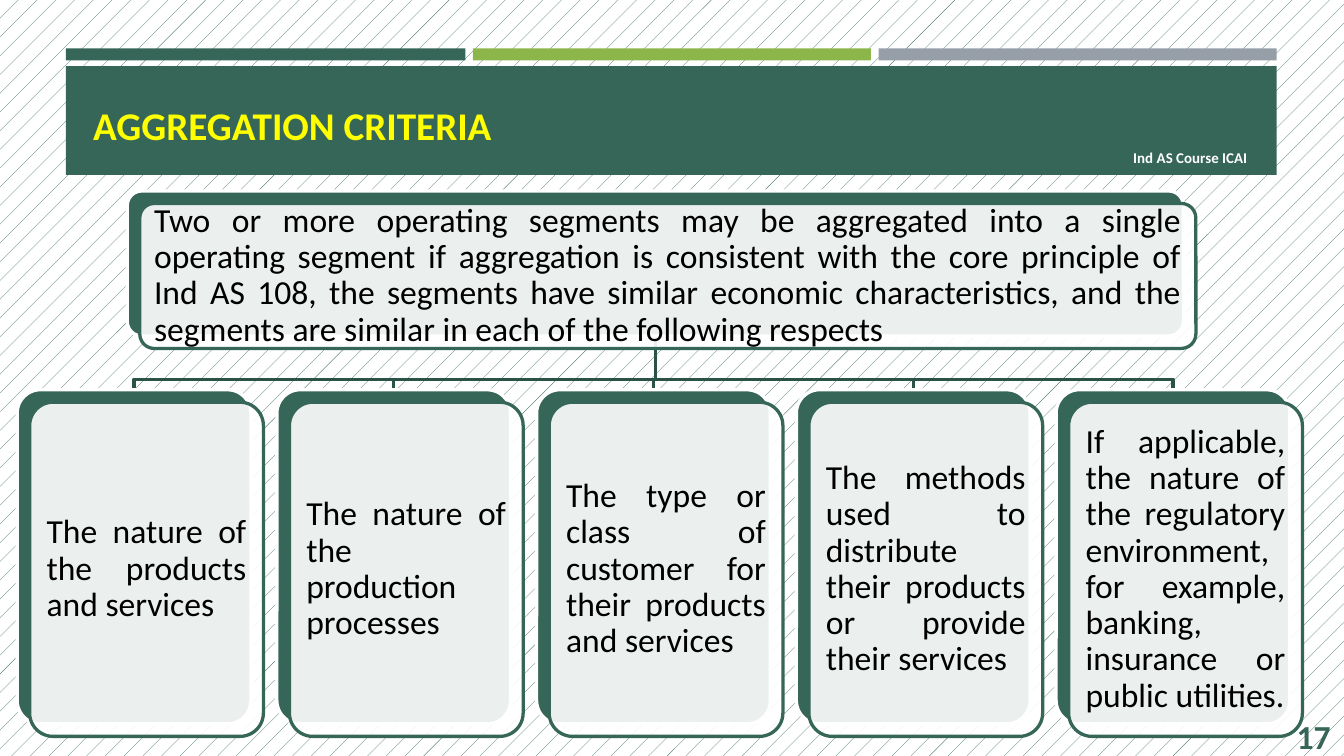
from dataclasses import dataclass

from lxml.etree import SubElement
from pptx import Presentation
from pptx.dml.color import RGBColor
from pptx.enum.dml import MSO_PATTERN
from pptx.enum.shapes import MSO_SHAPE
from pptx.enum.text import MSO_ANCHOR, PP_ALIGN
from pptx.oxml.ns import qn
from pptx.shapes.autoshape import Shape
from pptx.shapes.shapetree import SlideShapes
from pptx.util import Pt

GREEN = RGBColor(0x36, 0x66, 0x58)
DARK = RGBColor(0x2B, 0x52, 0x46)
LIME = RGBColor(0x8C, 0xB6, 0x4A)
GRAY = RGBColor(0x96, 0x9F, 0xA7)
WHITE = RGBColor(0xFF, 0xFF, 0xFF)
BLACK = RGBColor(0, 0, 0)
YELLOW = RGBColor(0xFF, 0xFF, 0)

SHIFT = 6.7
STROKE = 1.75
TRUNK = 351.2
BUS = 203.2


@dataclass
class Box:
    left: float
    top: float
    width: float
    height: float

    def points(self) -> tuple:
        return Pt(self.left), Pt(self.top), Pt(self.width), Pt(self.height)


@dataclass
class Card:
    box: Box
    text: str


@dataclass
class Style:
    size: float
    color: RGBColor
    align: PP_ALIGN
    bold: bool = True


ROOT = Card(
    Box(68.2, 102.3, 565.8, 77.7),
    "Two or more operating segments may be aggregated into a single "
    "operating segment if aggregation is consistent with the core principle "
    "of Ind AS 108, the segments have similar economic characteristics, and "
    "the segments are similar in each of the following respects",
)
TEXTS = [
    "The nature of the products and services",
    "The nature of the production processes",
    "The type or class of customer for their products and services",
    "The methods used to distribute their products or provide their services",
    "If applicable, the nature of the regulatory environment, for example, "
    "banking, insurance or public utilities.",
]
CARDS = [
    Card(Box(9.2 + 139.15 * i, 208.8, 125.2, 179), text)
    for i, text in enumerate(TEXTS)
]
BARS = [
    (Box(35.3, 26, 214, 6.4), GREEN),
    (Box(470.7, 26, 213.3, 6.4), GRAY),
    (Box(253.3, 26, 213.3, 6.4), LIME),
    (Box(35.3, 35.4, 648.7, 58.3), GREEN),
]


def write(shape: Shape, text: str, style: Style) -> None:
    frame = shape.text_frame
    frame.text = text
    frame.word_wrap = True
    frame.vertical_anchor = MSO_ANCHOR.MIDDLE
    line = frame.paragraphs[0]
    line.alignment = style.align
    font = line.runs[0].font
    font.name = "Calibri"
    font.size = Pt(style.size)
    font.bold = style.bold
    font.color.rgb = style.color


def label(shapes: SlideShapes, box: Box, text: str, style: Style) -> None:
    write(shapes.add_textbox(*box.points()), text, style)


def bar(shapes: SlideShapes, box: Box, color: RGBColor) -> Shape:
    shape = shapes.add_shape(MSO_SHAPE.RECTANGLE, *box.points())
    shape.shadow.inherit = False
    shape.fill.solid()
    shape.fill.fore_color.rgb = color
    shape.line.fill.background()
    return shape


def panel(shapes: SlideShapes, box: Box, fill: RGBColor, edge: RGBColor) -> Shape:
    shape = shapes.add_shape(MSO_SHAPE.ROUNDED_RECTANGLE, *box.points())
    shape.adjustments[0] = 0.1
    shape.shadow.inherit = False
    shape.fill.solid()
    shape.fill.fore_color.rgb = fill
    shape.line.color.rgb = edge
    shape.line.width = Pt(STROKE)
    return shape


def draw(shapes: SlideShapes, card: Card) -> None:
    box = card.box
    panel(shapes, box, GREEN, WHITE)
    front = Box(box.left + SHIFT, box.top + SHIFT, box.width, box.height)
    shape = panel(shapes, front, WHITE, GREEN)
    color = shape._element.spPr.find(qn("a:solidFill")).find(qn("a:srgbClr"))
    SubElement(color, qn("a:alpha")).set("val", "90000")
    write(shape, card.text, Style(18, BLACK, PP_ALIGN.JUSTIFY, False))
    frame = shape.text_frame
    frame.margin_left = frame.margin_right = Pt(5.4)
    frame.margin_top = frame.margin_bottom = Pt(5)
    frame.paragraphs[0].line_spacing = 0.9


def branch(shapes: SlideShapes, root: Box, leaf: Box) -> None:
    end = leaf.left + leaf.width / 2
    form = shapes.build_freeform(Pt(TRUNK), Pt(root.top + root.height))
    turns = [(TRUNK, BUS), (end, BUS), (end, leaf.top)]
    form.add_line_segments([(Pt(x), Pt(y)) for x, y in turns], close=False)
    shape = form.convert_to_shape()
    shape.shadow.inherit = False
    shape.fill.background()
    shape.line.color.rgb = DARK
    shape.line.width = Pt(STROKE)


def main() -> None:
    deck = Presentation()
    deck.slide_width = Pt(720)
    deck.slide_height = Pt(405)
    slide = deck.slides.add_slide(deck.slide_layouts[6])
    back = slide.background.fill
    back.patterned()
    back.pattern = MSO_PATTERN.PERCENT_5
    back.fore_color.rgb = GREEN
    back.back_color.rgb = WHITE
    shapes = slide.shapes

    for box, color in BARS:
        bar(shapes, box, color)
    course = bar(shapes, Box(595.2, 80.6, 85, 7.9), GREEN)
    write(course, "Ind AS Course ICAI", Style(8, WHITE, PP_ALIGN.CENTER))
    label(shapes, Box(42.8, 39.6, 578, 54), "AGGREGATION CRITERIA",
          Style(21, YELLOW, PP_ALIGN.JUSTIFY))
    label(shapes, Box(659.5, 383.8, 60.5, 21.6), "17",
          Style(18, GREEN, PP_ALIGN.RIGHT))

    for card in reversed(CARDS):
        branch(shapes, ROOT.box, card.box)
    for card in [ROOT, *CARDS]:
        draw(shapes, card)
    deck.save("out.pptx")


if __name__ == "__main__":
    main()
